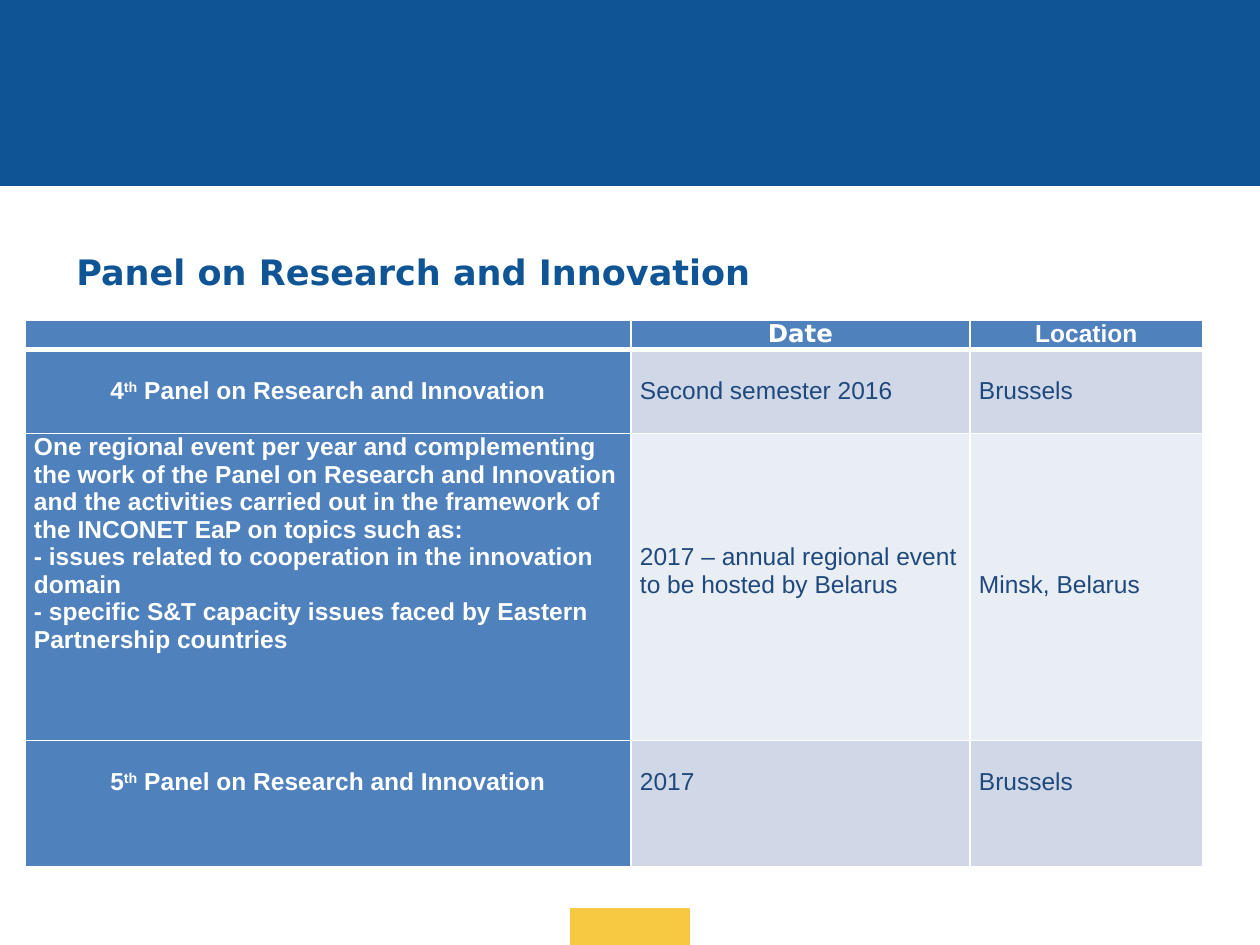
from lxml import etree
from pptx import Presentation
from pptx import util as u
from pptx.dml.color import RGBColor
from pptx.enum import shapes, text
from pptx.oxml import ns

SCALE = 914400 / 126
NAVY = RGBColor(0x0F, 0x54, 0x94)
YELLOW = RGBColor(0xF7, 0xC9, 0x43)
BLUE = RGBColor(0x4F, 0x81, 0xBD)
INK = RGBColor(0x1F, 0x49, 0x7D)
PALE = RGBColor(0xD0, 0xD8, 0xE8)
PALER = RGBColor(0xE9, 0xED, 0xF4)
WHITE = RGBColor(0xFF, 0xFF, 0xFF)

COLUMNS = [606, 339, 233]
ROWS = [29, 84, 307, 126]
ROW_FILLS = [BLUE, PALE, PALER, PALE]
MIDDLE = "middle"
EVENT = (
    "One regional event per year and complementing the work of the Panel on "
    "Research and Innovation and the activities carried out in the framework "
    "of the INCONET EaP on topics such as: \n"
    "- issues related to cooperation in the innovation domain\n"
    "- specific S&T capacity issues faced by Eastern Partnership countries"
)
PANEL = " Panel on Research and Innovation"
CELLS = [
    [([""], 0), (["Date"], 0), (["Location"], 0)],
    [(["4", "th", PANEL], MIDDLE), (["Second semester 2016"], MIDDLE), (["Brussels"], MIDDLE)],
    [([EVENT], 0), (["2017 – annual regional event to be hosted by Belarus"], 110),
     (["Minsk, Belarus"], 138)],
    [(["5", "th", PANEL], 28), (["2017"], 28), (["Brussels"], 28)],
]


def px(n):
    """Turn pixels into EMU."""
    return u.Emu(round(n * SCALE))


def style(font, size, name, color, bold):
    """Set the look of a font."""
    font.size, font.name, font.bold = u.Pt(size), name, bold
    font.color.rgb = color


def add_bar(s, color, *box):
    """Add a plain filled rectangle."""
    sp = s.shapes.add_shape(shapes.MSO_SHAPE.RECTANGLE, *map(px, box))
    sp.shadow.inherit = False
    sp.fill.solid()
    sp.fill.fore_color.rgb = color
    sp.line.color.rgb = color
    sp.line.width = u.Pt(0.75)


def add_title(s, words, *box):
    """Add the slide heading."""
    tf = s.shapes.add_textbox(*map(px, box)).text_frame
    tf.word_wrap = True
    tf.vertical_anchor = text.MSO_ANCHOR.MIDDLE
    tf.text = words
    style(tf.paragraphs[0].runs[0].font, 20, "DejaVu Sans", NAVY, True)


def set_borders(cell, bottom):
    """Draw white cell borders, with a chosen bottom width in points."""
    props = cell._tc.get_or_add_tcPr()
    widths = {"a:lnL": 1, "a:lnR": 1, "a:lnT": 1, "a:lnB": bottom}
    for i, (tag, width) in enumerate(widths.items()):
        line = etree.Element(ns.qn(tag), w=str(u.Pt(width)))
        fill = etree.SubElement(line, ns.qn("a:solidFill"))
        etree.SubElement(fill, ns.qn("a:srgbClr"), val=str(WHITE))
        props.insert(i, line)


def fill_cell(cell, parts, place, row, column):
    """Write one table cell, raising every second part."""
    strong = row == 0 or column == 0
    cell.fill.solid()
    cell.fill.fore_color.rgb = BLUE if strong else ROW_FILLS[row]
    set_borders(cell, 3 if row == 0 else 1)
    cell.margin_left = cell.margin_right = px(9)
    cell.margin_top = px(0 if place == MIDDLE else place)
    cell.margin_bottom = 0
    if place == MIDDLE:
        cell.vertical_anchor = text.MSO_ANCHOR.MIDDLE
    p = cell.text_frame.paragraphs[0]
    if parts == [""]:
        etree.SubElement(p._p, ns.qn("a:endParaRPr"), sz="1400")
        return
    p.text = parts[0]
    for part in parts[1:]:
        p.add_run().text = part
    if row == 0 or len(parts) > 1:
        p.alignment = text.PP_ALIGN.CENTER
    name = "DejaVu Sans" if parts == ["Date"] else "Arial"
    for r in p.runs:
        style(r.font, 14, name, WHITE if strong else INK, strong)
    for r in p.runs[1::2] if len(parts) > 1 else []:
        r.font._element.set("baseline", "30000")


def add_schedule(s, left, top):
    """Add the table of events."""
    table = s.shapes.add_table(
        len(ROWS), len(COLUMNS), px(left), px(top), px(sum(COLUMNS)), px(sum(ROWS))
    ).table
    for column, width in zip(table.columns, COLUMNS):
        column.width = px(width)
    for i, (height, cells) in enumerate(zip(ROWS, CELLS)):
        table.rows[i].height = px(height)
        for j, (parts, place) in enumerate(cells):
            fill_cell(table.cell(i, j), parts, place, i, j)


def main():
    """Build the slide and save it."""
    prs = Presentation()
    prs.slide_width, prs.slide_height = px(1260), px(945)
    s = prs.slides.add_slide(prs.slide_layouts[6])
    add_bar(s, YELLOW, 571, 909, 118, 36)
    add_bar(s, NAVY, 0, 0, 1260, 185)
    add_title(s, "Panel on Research and Innovation", 64, 228, 1134, 87)
    add_schedule(s, 25, 320)
    prs.save("out.pptx")


if __name__ == "__main__":
    main()
